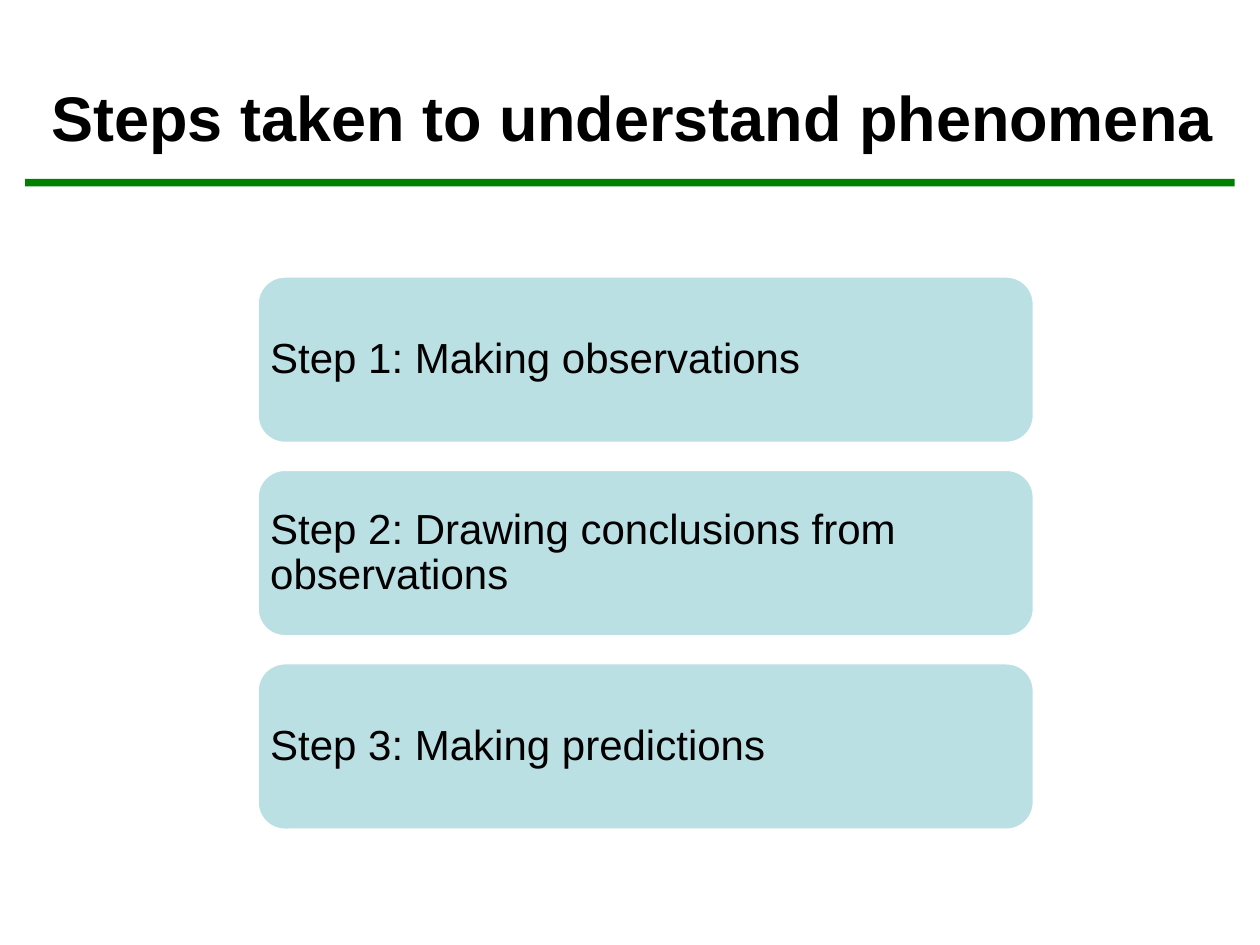
from pptx import Presentation
from pptx.dml.color import RGBColor
from pptx.enum.shapes import MSO_SHAPE as Shape
from pptx.enum.text import MSO_ANCHOR as Anchor, PP_ALIGN as Align
from pptx.util import Inches, Pt

STEPS = [
    "Step 1: Making observations",
    "Step 2: Drawing conclusions from observations",
    "Step 3: Making predictions",
]
STEP_TOP, STEP_PITCH = 2.19, 1.535


def color(value):
    return RGBColor.from_string(value)


def set_text(sp, text, size=24, bold=False, align=Align.LEFT, spacing=1.0, inset=0.1):
    tf = sp.text_frame
    tf.word_wrap = True
    tf.vertical_anchor = Anchor.MIDDLE
    tf.margin_left = tf.margin_right = Inches(inset)
    tf.margin_top = tf.margin_bottom = Inches(0.05)
    p = tf.paragraphs[0]
    p.alignment = align
    p.line_spacing = spacing
    r = p.add_run()
    r.text = text
    r.font.name = "Arial"
    r.font.size = Pt(size)
    r.font.bold = bold
    r.font.color.rgb = color("000000")


def add_box(s, kind, left, top, width, height, fill, line=None):
    sp = s.shapes.add_shape(kind, Inches(left), Inches(top), Inches(width), Inches(height))
    sp.shadow.inherit = False
    sp.fill.solid()
    sp.fill.fore_color.rgb = color(fill)
    if line:
        sp.line.color.rgb = color(line)
        sp.line.width = Pt(2)
    else:
        sp.line.fill.background()
    return sp


def add_title(s, text):
    sp = s.shapes.add_textbox(Inches(0.25), Inches(0.3), Inches(9.54), Inches(1.25))
    set_text(sp, text, size=36, bold=True, align=Align.CENTER)


def add_step(s, index, text):
    top = STEP_TOP + index * STEP_PITCH
    sp = add_box(s, Shape.ROUNDED_RECTANGLE, 2.04, top, 6.17, 1.33, "BBE0E3", line="FFFFFF")
    # The rounded corners already push the text inwards
    set_text(sp, text, spacing=0.9, inset=0.04)


def main():
    prs = Presentation()
    prs.slide_width, prs.slide_height = Inches(10), Inches(7.5)
    s = prs.slides.add_slide(prs.slide_layouts[6])
    add_box(s, Shape.RECTANGLE, 0.2, 1.42, 9.6, 0.06, "008000")
    add_title(s, "Steps taken to understand phenomena")
    for index, text in enumerate(STEPS):
        add_step(s, index, text)
    prs.save("out.pptx")


if __name__ == "__main__":
    main()
